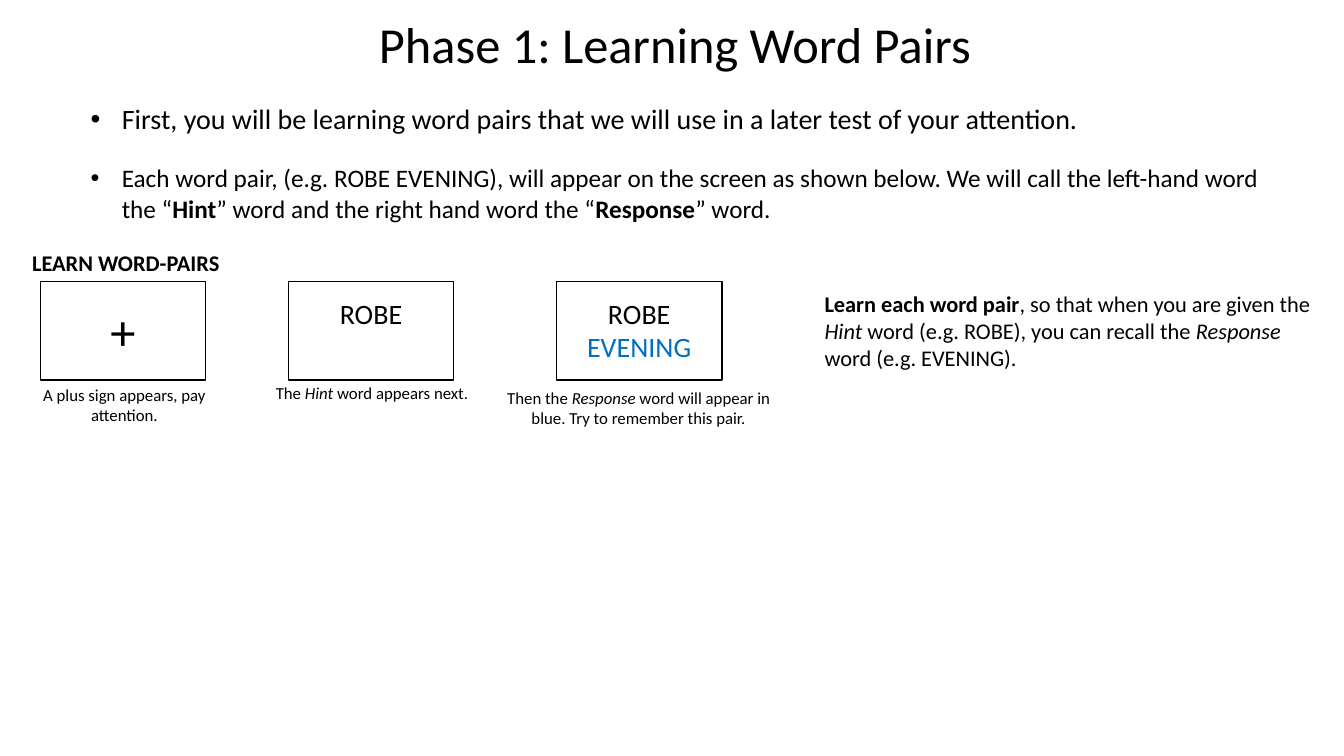
from lxml import etree
from pptx import Presentation
from pptx.dml.color import RGBColor
from pptx.enum.shapes import MSO_SHAPE
from pptx.enum.text import MSO_ANCHOR, PP_ALIGN
from pptx.oxml.ns import qn
from pptx.util import Inches, Pt

RECT = MSO_SHAPE.RECTANGLE
LEFT, CENTER = PP_ALIGN.LEFT, PP_ALIGN.CENTER
TOP, MIDDLE = MSO_ANCHOR.TOP, MSO_ANCHOR.MIDDLE
COLORS = {"text": "000000", "response": "0070C0"}
FONT = "Calibri"
SCREEN_W, SCREEN_H = 1.64, 0.98
WORD_INSET = 0.15


def rgb(name):
    return RGBColor.from_string(COLORS[name])


def write(p, runs, size, align=LEFT, color="text"):
    """Fill a paragraph with (text, style) runs; style is "", "b" or "i"."""
    p.alignment = align
    p.font.name, p.font.size = FONT, Pt(size)
    p.font.color.rgb = rgb(color)
    for text, style in runs:
        r = p.add_run()
        r.text = text
        if style == "b":
            r.font.bold = True
        elif style == "i":
            r.font.italic = True


def add_text(slide, box, runs, size, align=LEFT):
    tf = slide.shapes.add_textbox(*map(Inches, box)).text_frame
    tf.word_wrap = True
    write(tf.paragraphs[0], runs, size, align)
    return tf


def set_bullet(p, indent):
    pPr = p._p.get_or_add_pPr()
    pPr.set("marL", str(Inches(indent)))
    pPr.set("indent", str(-Inches(indent)))
    font = etree.Element(qn("a:buFont"), typeface="Arial")
    bullet = etree.Element(qn("a:buChar"), char="•")
    # Bullet settings follow the spacing and precede the run defaults
    default = pPr.find(qn("a:defRPr"))
    default.addprevious(font)
    default.addprevious(bullet)


def add_instructions(slide, box):
    tf = add_text(slide, box, [
        ("First, you will be learning word pairs that we will use in a later "
         "test of your attention.", "")], 20)
    p = tf.add_paragraph()
    p.space_before = Pt(19.5)
    write(p, [
        ("Each word pair, (e.g. ROBE EVENING), will appear on the screen as "
         "shown below. We will call the left-hand word the “", ""),
        ("Hint", "b"),
        ("” word and the right hand word the “", ""),
        ("Response", "b"),
        ("” word.", "")], 18)
    for p in tf.paragraphs:
        set_bullet(p, 0.31)


def add_screen(slide, left, top, lines, size, anchor):
    """Draw one trial screen; lines are (text, color) pairs."""
    sp = slide.shapes.add_shape(
        RECT, *map(Inches, (left, top, SCREEN_W, SCREEN_H)))
    sp.shadow.inherit = False
    sp.fill.background()
    sp.line.color.rgb = rgb("text")
    sp.line.width = Pt(1)
    tf = sp.text_frame
    tf.word_wrap = True
    tf.vertical_anchor = anchor
    if anchor == TOP:
        tf.margin_top = Inches(WORD_INSET)
    for i, (text, color) in enumerate(lines):
        p = tf.add_paragraph() if i else tf.paragraphs[0]
        write(p, [(text, "")], size, CENTER, color)


def add_trial(slide, left, top):
    """Place the heading, the three screens with captions and the summary."""
    add_text(slide, (left + 0.22, top, 2.09, 0.37),
             [("LEARN WORD-PAIRS", "b")], 16)

    hint, response = ("ROBE", "text"), ("EVENING", "response")
    screens = [
        (0.4, [("+", "text")], 36, MIDDLE, (0, 1.35, 2.47, 0.5),
         [("A plus sign appears, pay attention.", "")]),
        (2.86, [hint], 20, TOP, (2.33, 1.33, 2.72, 0.3),
         [("The ", ""), ("Hint", "i"), (" word appears next.", "")]),
        (5.52, [hint, response], 20, TOP, (4.87, 1.38, 2.93, 0.5),
         [("Then the ", ""), ("Response ", "i"),
          ("word will appear in blue. Try to remember this pair.", "")]),
    ]
    for x, lines, size, anchor, (cx, cy, cw, ch), caption in screens:
        add_screen(slide, left + x, top + 0.37, lines, size, anchor)
        add_text(slide, (left + cx, top + cy, cw, ch), caption, 12, CENTER)

    add_text(slide, (left + 8.08, top + 0.41, 5.06, 0.91), [
        ("Learn each word pair", "b"),
        (", so that when you are given the ", ""),
        ("Hint", "i"),
        (" word (e.g. ROBE), you can recall the ", ""),
        ("Response", "i"),
        (" word (e.g. EVENING).", "")], 16)


def main():
    prs = Presentation()
    prs.slide_width, prs.slide_height = Inches(13.33), Inches(7.5)
    slide = prs.slides.add_slide(prs.slide_layouts[6])
    add_text(slide, (3.04, 0.08, 7.31, 0.71),
             [("Phase 1: Learning Word Pairs", "")], 36, CENTER)
    add_instructions(slide, (0.8, 0.96, 11.96, 1.31))
    add_trial(slide, 0, 2.42)
    prs.save("out.pptx")


if __name__ == "__main__":
    main()
